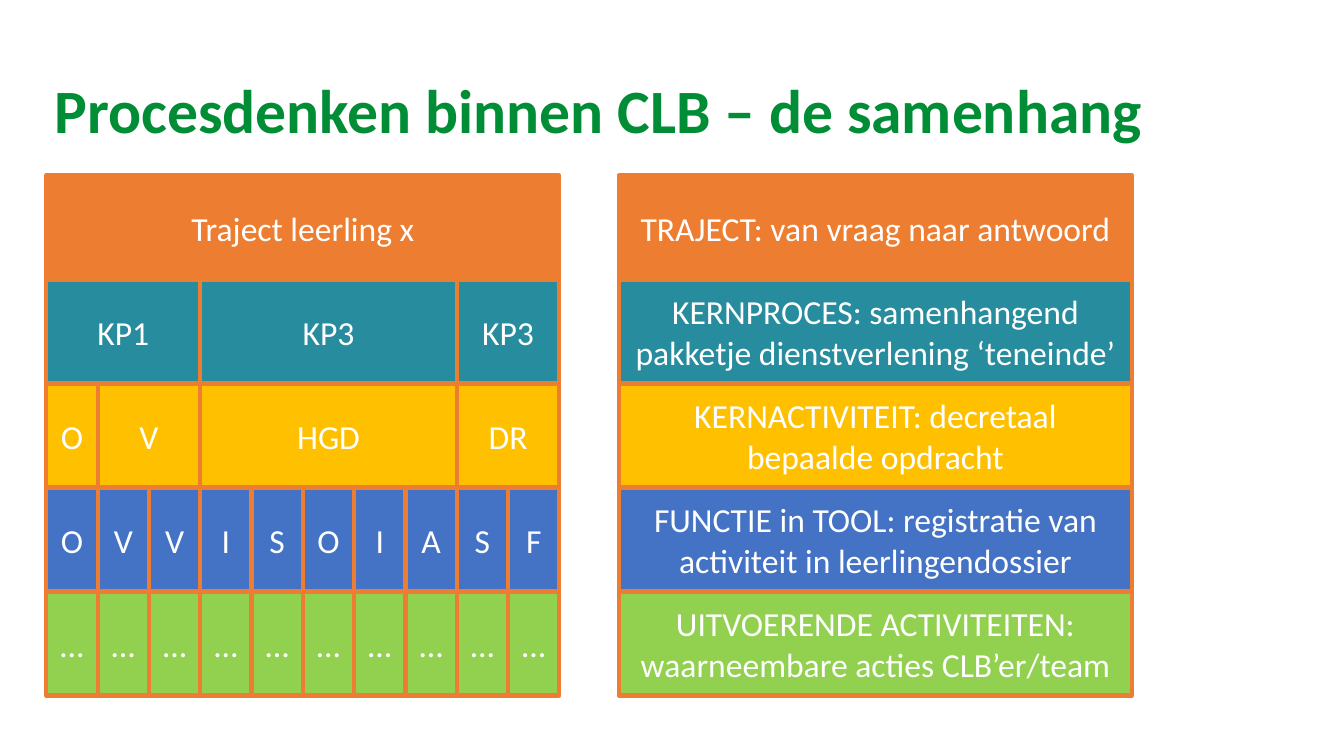
import pptx
import pptx.util
from pptx.dml.color import RGBColor
from pptx.enum.shapes import MSO_SHAPE
from pptx.enum.text import MSO_ANCHOR, MSO_AUTO_SIZE, PP_ALIGN

Pt = pptx.util.Pt

TRAJECT_LEFT, UITLEG_LEFT, TOP = 33.1, 442.1, 125.4
UNIT, ROW_HEIGHT = 36.65, 74.3
UNITS_PER_ROW = 10

# Per level: colour, (text, width in units) of each step, explanation
LEVELS = [
    ("ED7D31", [("Traject leerling x", UNITS_PER_ROW)],
     "TRAJECT: van vraag naar antwoord"),
    ("278C9D", [("KP1", 3), ("KP3", 5), ("KP3", 2)],
     "KERNPROCES: samenhangend pakketje dienstverlening ‘teneinde’"),
    ("FFC000", [("O", 1), ("V", 2), ("HGD", 5), ("DR", 2)],
     "KERNACTIVITEIT: decretaal bepaalde opdracht"),
    ("4472C4", [(functie, 1) for functie in "OVVISOIASF"],
     "FUNCTIE in TOOL: registratie van activiteit in leerlingendossier"),
    ("92D050", [("…", 1)] * UNITS_PER_ROW,
     "UITVOERENDE ACTIVITEITEN: waarneembare acties CLB’er/team"),
]


def colour(hex_string):
    return RGBColor.from_string(hex_string)


class SlideBuilder:
    font_name = "Calibri"
    title_colour = "008D36"
    text_colour = "FFFFFF"
    border_colour = "ED7D31"

    def __init__(self, slide):
        self.slide = slide

    def format_paragraph(self, paragraph, size, hex_string, align, bold=False):
        paragraph.alignment = align
        paragraph.font.name = self.font_name
        paragraph.font.size = Pt(size)
        paragraph.font.bold = bold
        paragraph.font.color.rgb = colour(hex_string)

    def title(self, text, left, top, width, height):
        heading = self.slide.shapes.title
        heading.left, heading.top = Pt(left), Pt(top)
        heading.width, heading.height = Pt(width), Pt(height)
        frame = heading.text_frame
        frame.text = text
        frame.word_wrap = True
        frame.auto_size = MSO_AUTO_SIZE.NONE
        frame.vertical_anchor = MSO_ANCHOR.MIDDLE
        paragraph = frame.paragraphs[0]
        paragraph.line_spacing = 0.9
        self.format_paragraph(paragraph, 44, self.title_colour, PP_ALIGN.LEFT, bold=True)

    def block(self, text, left, top, units, fill):
        """Draw one bordered cell that spans a number of units."""
        cell = self.slide.shapes.add_shape(
            MSO_SHAPE.RECTANGLE, Pt(left), Pt(top), Pt(units * UNIT), Pt(ROW_HEIGHT))
        cell.shadow.inherit = False
        cell.fill.solid()
        cell.fill.fore_color.rgb = colour(fill)
        cell.line.color.rgb = colour(self.border_colour)
        cell.line.width = Pt(3)
        frame = cell.text_frame
        frame.text = text
        frame.word_wrap = True
        frame.vertical_anchor = MSO_ANCHOR.MIDDLE
        self.format_paragraph(frame.paragraphs[0], 24, self.text_colour, PP_ALIGN.CENTER)


def main():
    presentation = pptx.Presentation()
    presentation.slide_width, presentation.slide_height = Pt(960), Pt(540)
    title_only = presentation.slide_layouts[5]
    builder = SlideBuilder(presentation.slides.add_slide(title_only))

    builder.title("Procesdenken binnen CLB – de samenhang", 31.7, 28.8, 891.4, 104.4)
    for row, (fill, steps, explanation) in enumerate(LEVELS):
        top = TOP + row * ROW_HEIGHT
        units_before = 0
        for text, units in steps:
            builder.block(text, TRAJECT_LEFT + units_before * UNIT, top, units, fill)
            units_before += units
        builder.block(explanation, UITLEG_LEFT, top, UNITS_PER_ROW, fill)

    presentation.save("out.pptx")


if __name__ == "__main__":
    main()
